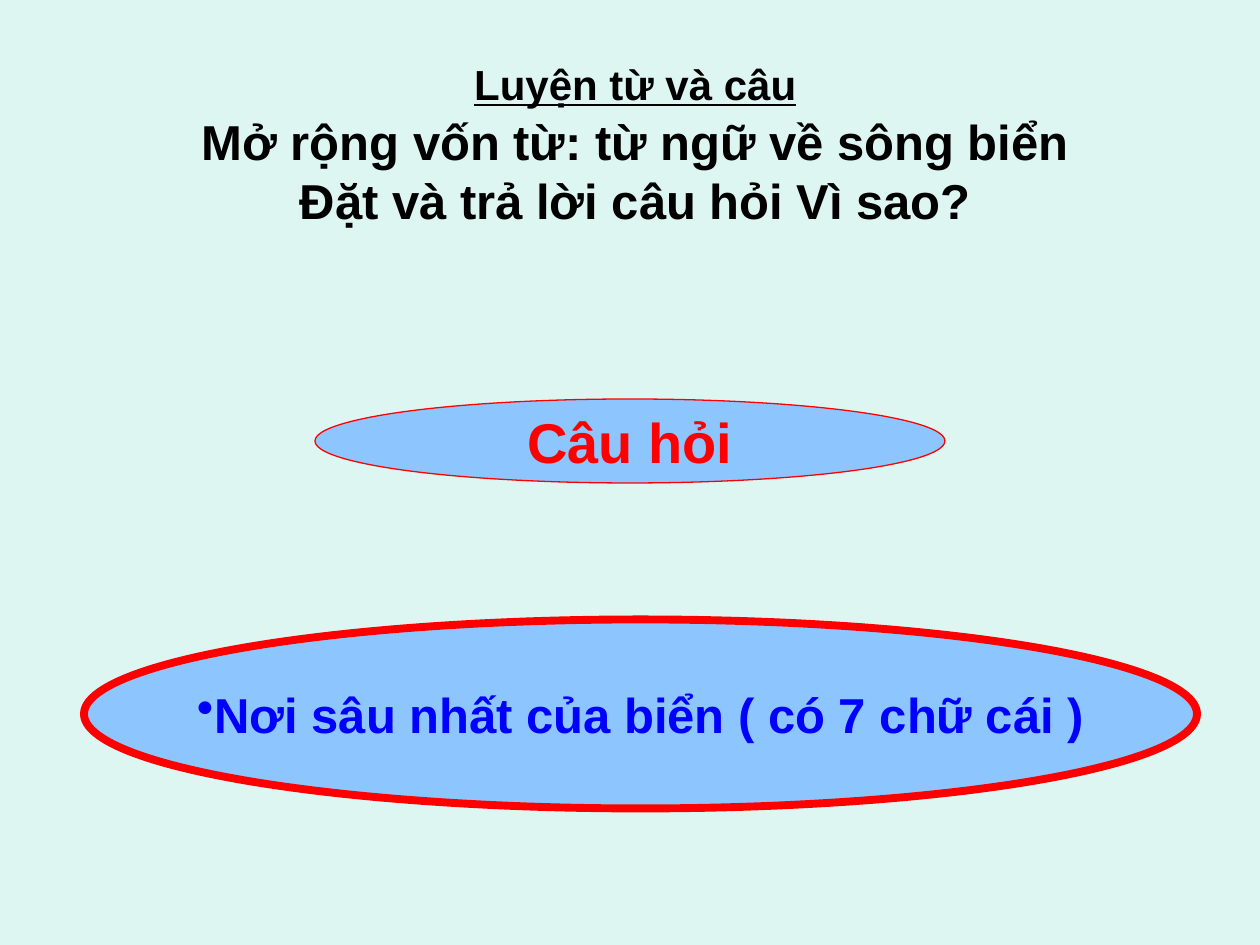
from lxml.etree import SubElement
from pptx import Presentation
from pptx.dml.color import RGBColor
from pptx.enum.shapes import MSO_SHAPE
from pptx.enum.text import MSO_ANCHOR, PP_ALIGN
from pptx.oxml.ns import qn
from pptx.util import Pt

HUES = {"back": "DEF6F1", "sky": "8DC6FF", "red": "FF0000",
        "blue": "0000FF", "black": "000000"}

LESSON = "Luyện từ và câu"
TOPIC = "Mở rộng vốn từ: từ ngữ về sông biển\nĐặt và trả lời câu hỏi Vì sao?"
# text, box (left, top, width, height), line width, size, colour, bullet
OVALS = [
    ("Câu hỏi", (180, 228, 360, 48), 0.75, 32, "red", False),
    ("Nơi sâu nhất của biển ( có 7 chữ cái )", (48, 354, 636, 108),
     4.5, 28, "blue", True),
]


def hue(name):
    return RGBColor.from_string(HUES[name])


def write(shape, text, size, tint, anchor, wrap=False, under=None):
    frame = shape.text_frame
    frame.text = text
    frame.word_wrap = wrap
    frame.vertical_anchor = anchor
    for para in frame.paragraphs:
        para.alignment = PP_ALIGN.CENTER
        for run in para.runs:
            font = run.font
            font.name, font.size, font.bold = "Arial", Pt(size), True
            font.underline = under
            font.color.rgb = hue(tint)


deck = Presentation()
deck.slide_width, deck.slide_height = Pt(720), Pt(540)
slide = deck.slides.add_slide(deck.slide_layouts[5])
fill = slide.background.fill
fill.solid()
fill.fore_color.rgb = hue("back")

# Ovals with the question
for text, box, width, size, tint, dot in OVALS:
    oval = slide.shapes.add_shape(MSO_SHAPE.OVAL, *map(Pt, box))
    oval.shadow.inherit = False
    oval.fill.solid()
    oval.fill.fore_color.rgb = hue("sky")
    oval.line.color.rgb = hue("red")
    oval.line.width = Pt(width)
    write(oval, text, size, tint, MSO_ANCHOR.MIDDLE)
    if dot:
        props = oval.text_frame.paragraphs[0]._p.get_or_add_pPr()
        SubElement(props, qn("a:buChar"), char="•")

# Topic title
title = slide.shapes.title
title.left, title.top, title.width, title.height = map(Pt, (84, 60, 558, 90))
write(title, TOPIC, 28, "black", MSO_ANCHOR.TOP)

# Lesson heading
head = slide.shapes.add_textbox(*map(Pt, (186, 30, 354, 36)))
write(head, LESSON, 24, "black", MSO_ANCHOR.TOP, wrap=True, under=True)

deck.save("out.pptx")
